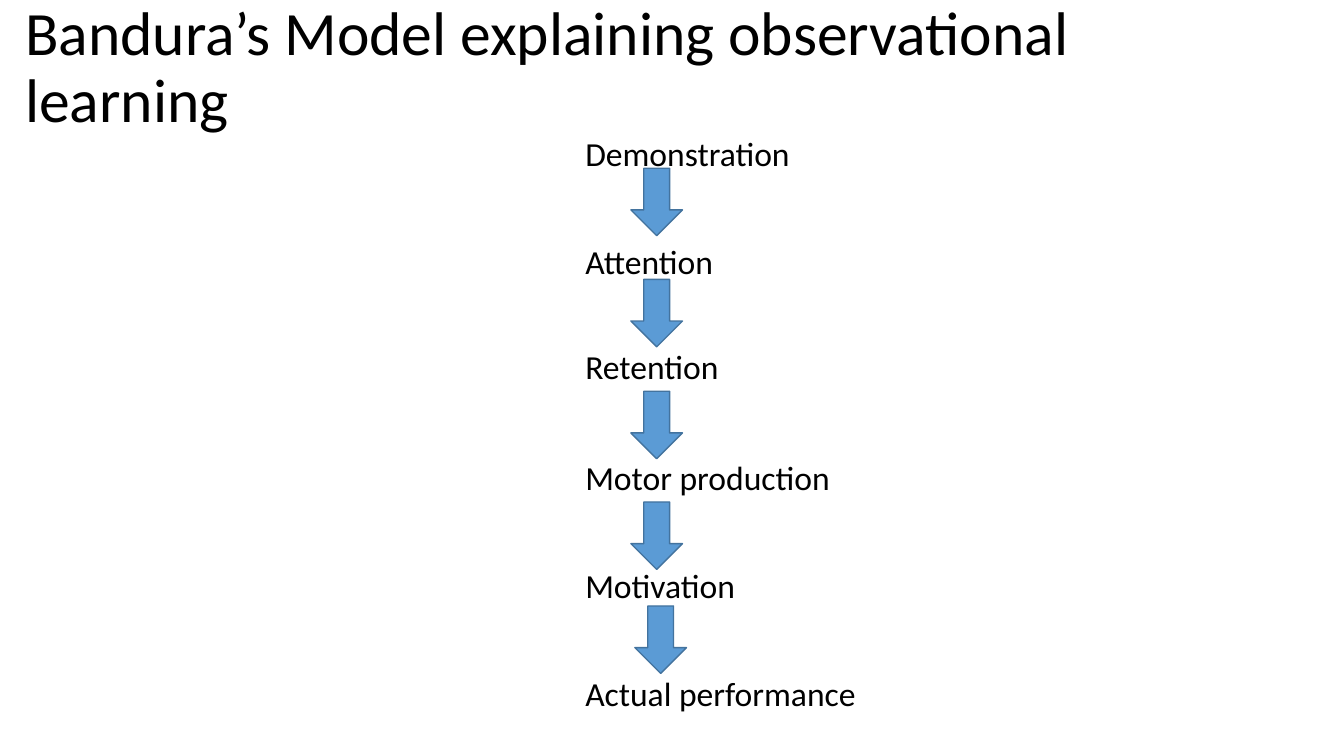
from pptx import Presentation
from pptx.dml.color import RGBColor
from pptx.enum.shapes import MSO_SHAPE as Preset
from pptx.enum.text import MSO_ANCHOR as Anchor, MSO_AUTO_SIZE as AutoSize, PP_ALIGN as Align
from pptx.util import Cm, Pt

COLOURS = {"text": "000000", "arrow": "5B9BD5", "outline": "43739E"}
STEP_LEFT = 14.5
STEPS = [
    ("Demonstration", 3.23, 6.0),
    ("Attention", 5.94, 5.36),
    ("Retention", 8.59, 5.36),
    ("Motor production", 11.4, 7.52),
    ("Motivation", 14.12, 5.36),
    ("Actual performance", 16.84, 7.52),
]
ARROWS = [(15.9, 4.24), (15.9, 7.04), (15.9, 9.86), (15.9, 12.65), (16.0, 15.27)]


class ModelSlide:
    font_name = "Calibri"

    def __init__(self, deck):
        self.slide = deck.slides.add_slide(deck.slide_layouts[5])

    def colour(self, name):
        return RGBColor.from_string(COLOURS[name])

    def place(self, shape, left, top, width, height):
        shape.left, shape.top = Cm(left), Cm(top)
        shape.width, shape.height = Cm(width), Cm(height)

    def set_wording(self, frame, wording, size):
        frame.text = wording
        frame.word_wrap = True
        paragraph = frame.paragraphs[0]
        paragraph.alignment = Align.LEFT
        font = paragraph.runs[0].font
        font.name, font.size = self.font_name, Pt(size)
        font.color.rgb = self.colour("text")
        return paragraph

    def title(self, wording):
        heading = self.slide.shapes.title
        self.place(heading, 0.38, -0.1, 29.21, 3.68)
        frame = heading.text_frame
        frame.auto_size = AutoSize.NONE
        frame.vertical_anchor = Anchor.MIDDLE
        self.set_wording(frame, wording, 44).line_spacing = 0.9

    def step(self, wording, top, width):
        label = self.slide.shapes.add_textbox(Cm(STEP_LEFT), Cm(top), Cm(width), Cm(1.27))
        self.set_wording(label.text_frame, wording, 24)
        label.text_frame.auto_size = AutoSize.SHAPE_TO_FIT_TEXT

    def arrow(self, left, top):
        arrow = self.slide.shapes.add_shape(
            Preset.DOWN_ARROW, Cm(left), Cm(top), Cm(1.3), Cm(1.7))
        arrow.shadow.inherit = False
        arrow.fill.solid()
        arrow.fill.fore_color.rgb = self.colour("arrow")
        arrow.line.color.rgb = self.colour("outline")
        arrow.line.width = Pt(1)


def main():
    deck = Presentation()
    deck.slide_width, deck.slide_height = Cm(33.87), Cm(19.05)
    model = ModelSlide(deck)
    model.title("Bandura’s Model explaining observational learning")
    for wording, top, width in STEPS:
        model.step(wording, top, width)
    for left, top in ARROWS:
        model.arrow(left, top)
    deck.save("out.pptx")


if __name__ == "__main__":
    main()
